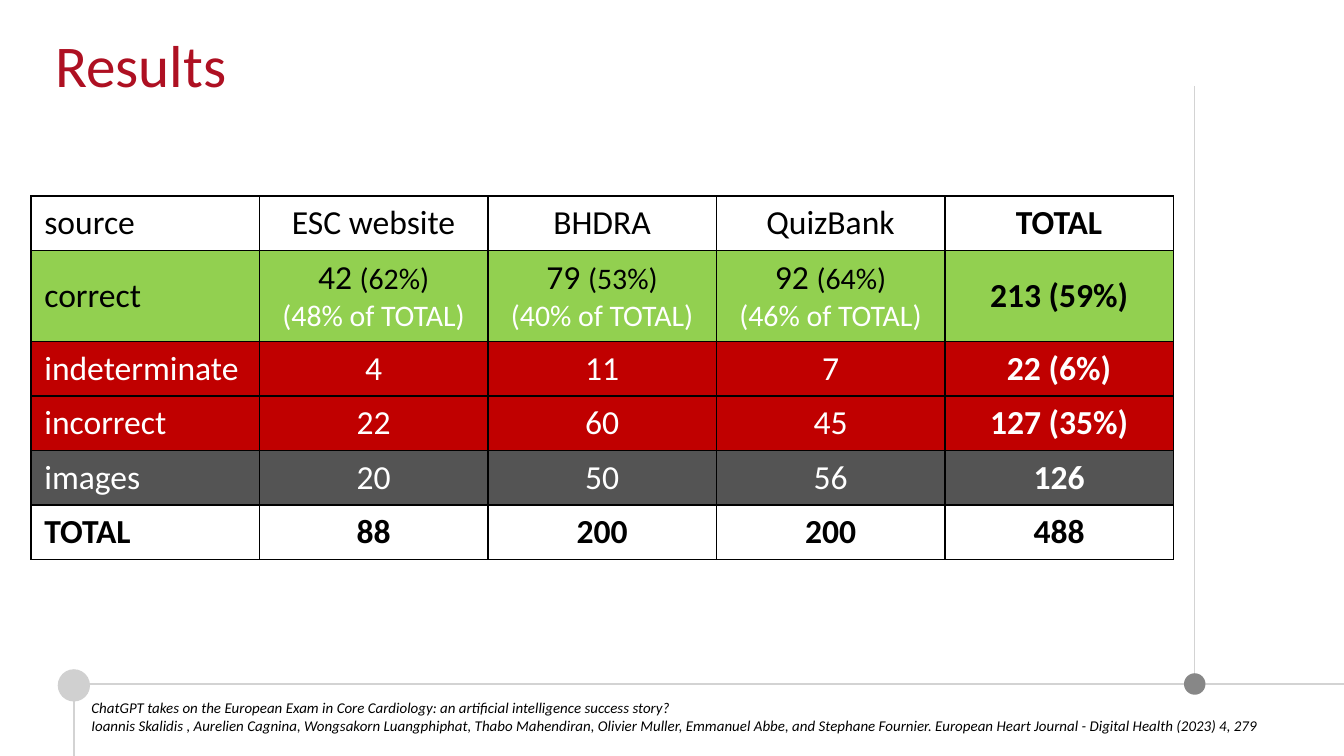
from lxml import etree
from pptx import Presentation
from pptx.dml.color import RGBColor
from pptx.enum.shapes import MSO_CONNECTOR, MSO_SHAPE
from pptx.enum.text import MSO_ANCHOR, MSO_AUTO_SIZE, PP_ALIGN
from pptx.oxml import parse_xml
from pptx.oxml.ns import nsdecls, qn
from pptx.util import Inches, Pt

SLIDE_WIDTH = 10
SLIDE_HEIGHT = SLIDE_WIDTH * 9 / 16
FONT = "Calibri"
BLACK, WHITE = "000000", "FFFFFF"
GREEN, RED, GREY = "92D050", "C00000", "545454"

HEADER = ["source", "ESC website", "BHDRA", "QuizBank", "TOTAL"]
ROWS = [
    (HEADER, WHITE, BLACK),
    (["correct", ("42 ", "(62%)", "(48% of TOTAL)"), ("79 ", "(53%)", "(40% of TOTAL)"),
      ("92 ", "(64%)", "(46% of TOTAL)"), "213 (59%)"], GREEN, BLACK),
    (["indeterminate", "4", "11", "7", "22 (6%)"], RED, WHITE),
    (["incorrect", "22", "60", "45", "127 (35%)"], RED, WHITE),
    (["images", "20", "50", "56", "126"], GREY, WHITE),
    (["TOTAL", "88", "200", "200", "488"], WHITE, BLACK),
]
CITATION = [
    "ChatGPT takes on the European Exam in Core Cardiology: an artificial intelligence success story?",
    "Ioannis Skalidis , Aurelien Cagnina, Wongsakorn Luangphiphat, Thabo Mahendiran, "
    "Olivier Muller, Emmanuel Abbe, and Stephane Fournier. "
    "European Heart Journal - Digital Health (2023) 4, 279",
]


def rgb(hex_color):
    """Turn a hex string into a colour."""
    return RGBColor.from_string(hex_color)


def add_run(paragraph, text, size, color, bold=False, italic=False):
    """Append one formatted run to a paragraph."""
    run = paragraph.add_run()
    run.text = text
    font = run.font
    font.name, font.size, font.bold, font.italic = FONT, Pt(size), bold, italic
    font.color.rgb = rgb(color)


def set_insets(frame, inset=0.05):
    """Give a text frame equal insets and wrapping."""
    frame.word_wrap = True
    frame.margin_left = frame.margin_right = Inches(inset)
    frame.margin_top = frame.margin_bottom = Inches(inset)


def add_rule(slide, x1, y1, x2, y2):
    """Draw one thin grey guide line."""
    rule = slide.shapes.add_connector(
        MSO_CONNECTOR.STRAIGHT, Inches(x1), Inches(y1), Inches(x2), Inches(y2))
    rule.line.color.rgb = rgb("D3D3D3")
    rule.line.width = Pt(0.75)
    etree.SubElement(rule._element.spPr, qn("a:effectLst"))


def add_dot(slide, center_x, center_y, diameter, color):
    """Draw a filled circle around a centre point."""
    dot = slide.shapes.add_shape(
        MSO_SHAPE.OVAL, Inches(center_x - diameter / 2), Inches(center_y - diameter / 2),
        Inches(diameter), Inches(diameter))
    dot.shadow.inherit = False
    dot.fill.solid()
    dot.fill.fore_color.rgb = rgb(color)
    dot.line.fill.background()


def add_guides(slide, left, top, right, bottom, base_y, column_x):
    """Draw the guide lines and the dots at their crossings."""
    add_rule(slide, left, base_y, right, base_y)
    add_rule(slide, column_x, top, column_x, base_y)
    add_rule(slide, left, base_y + 0.01, left, bottom)
    add_dot(slide, left, base_y + 0.01, 0.24, "D0D0D0")
    add_dot(slide, column_x, base_y, 0.16, "878787")


def add_title(slide, left, top, width, height):
    """Place and format the title placeholder."""
    title = slide.shapes.title
    title.left, title.top = Inches(left), Inches(top)
    title.width, title.height = Inches(width), Inches(height)
    frame = title.text_frame
    set_insets(frame)
    frame.auto_size = MSO_AUTO_SIZE.NONE
    frame.vertical_anchor = MSO_ANCHOR.TOP
    paragraph = frame.paragraphs[0]
    paragraph.alignment = PP_ALIGN.LEFT
    paragraph.line_spacing = Pt(23)
    add_run(paragraph, "Results", 31.7, "AE1022")


def add_borders(cell):
    """Put black borders on all sides of a cell, ahead of its fill."""
    properties = cell._tc.get_or_add_tcPr()
    for index, side in enumerate(("lnL", "lnR", "lnT", "lnB")):
        properties.insert(index, parse_xml(
            f'<a:{side} {nsdecls("a")} w="{Pt(1)}"><a:solidFill>'
            f'<a:srgbClr val="{BLACK}"/></a:solidFill></a:{side}>'))


def fill_cell(cell, content, fill, color, bold, centered):
    """Write one table cell: a plain value, or a value with its shares."""
    cell.fill.solid()
    cell.fill.fore_color.rgb = rgb(fill)
    add_borders(cell)
    cell.vertical_anchor = MSO_ANCHOR.MIDDLE
    paragraph = cell.text_frame.paragraphs[0]
    paragraph.alignment = PP_ALIGN.CENTER if centered else PP_ALIGN.LEFT
    if isinstance(content, str):
        add_run(paragraph, content, 18, color, bold)
        return
    count, share, total_share = content
    add_run(paragraph, count, 18, color)
    add_run(paragraph, share, 16, color)
    paragraph.add_line_break()
    add_run(paragraph, total_share, 16, WHITE)


def add_results_table(slide, left, top, width, row_height, tall_row_height):
    """Build the table of answers by question source."""
    height = row_height * (len(ROWS) - 1) + tall_row_height
    table = slide.shapes.add_table(
        len(ROWS), len(HEADER), Inches(left), Inches(top), Inches(width), Inches(height)).table
    table.first_row = table.horz_banding = False
    for column in table.columns:
        column.width = Inches(width / len(HEADER))
    for row_index, (values, fill, color) in enumerate(ROWS):
        tall = any(isinstance(value, tuple) for value in values)
        table.rows[row_index].height = Inches(tall_row_height if tall else row_height)
        for column_index, value in enumerate(values):
            bold = "TOTAL" in (values[0], HEADER[column_index])
            fill_cell(table.cell(row_index, column_index), value, fill, color,
                      bold, column_index > 0)


def add_citation(slide, left, top, width, height):
    """Add the source reference at the foot of the slide."""
    frame = slide.shapes.add_textbox(
        Inches(left), Inches(top), Inches(width), Inches(height)).text_frame
    set_insets(frame)
    frame.auto_size = MSO_AUTO_SIZE.SHAPE_TO_FIT_TEXT
    for index, line in enumerate(CITATION):
        paragraph = frame.add_paragraph() if index else frame.paragraphs[0]
        add_run(paragraph, line, 8, BLACK, italic=True)


def main():
    """Build and save the slide."""
    deck = Presentation()
    deck.slide_width, deck.slide_height = Inches(SLIDE_WIDTH), Inches(SLIDE_HEIGHT)
    slide = deck.slides.add_slide(deck.slide_layouts[5])
    add_guides(slide, 0.55, 0.64, SLIDE_WIDTH, SLIDE_HEIGHT, base_y=5.09, column_x=8.89)
    add_title(slide, 0.36, 0.37, 7.23, 0.47)
    add_results_table(slide, 0.23, 1.46, 8.5, row_height=0.4, tall_row_height=0.67)
    add_citation(slide, 0.63, 5.15, 9.01, 0.37)
    deck.save("out.pptx")


if __name__ == "__main__":
    main()
